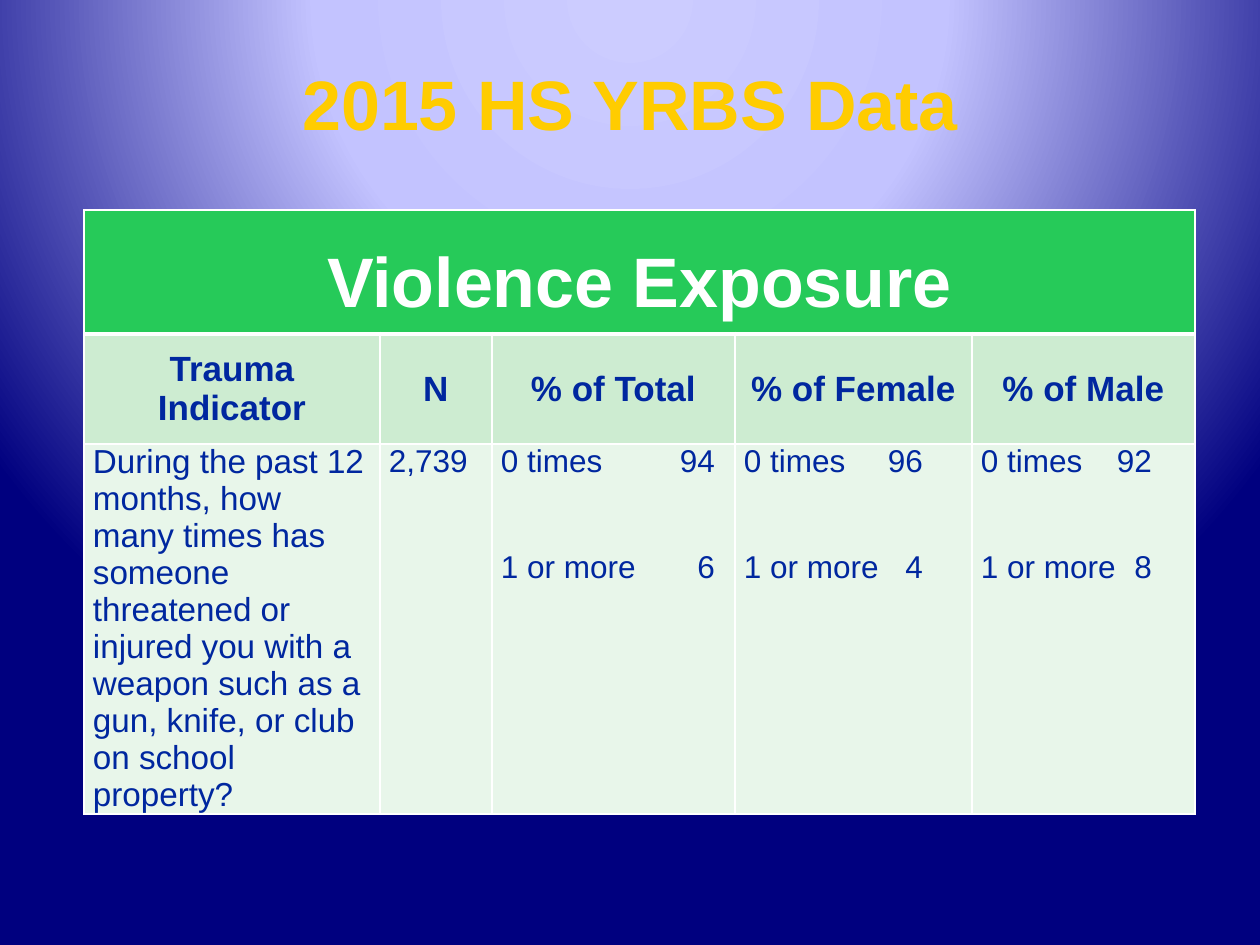
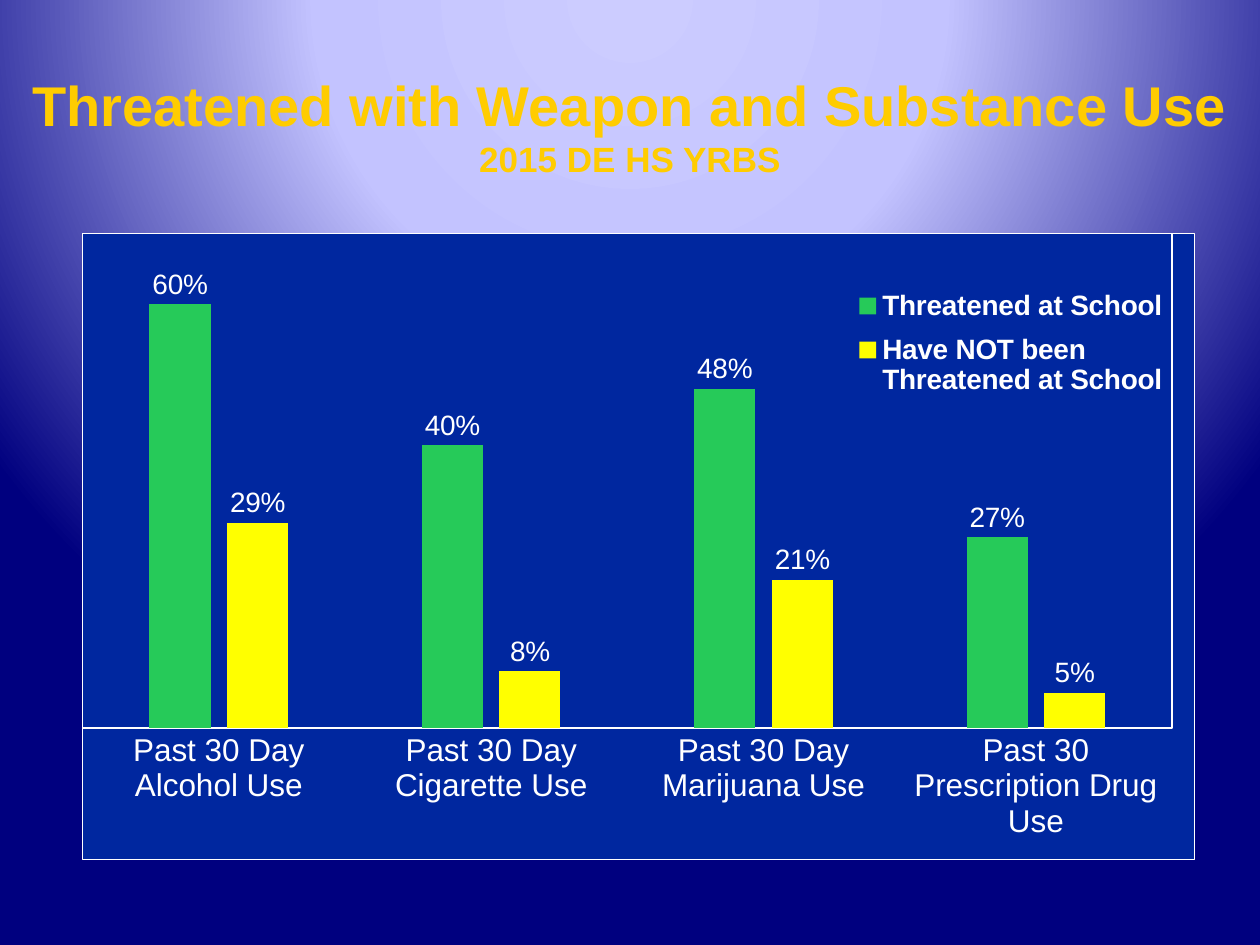
"""Build two slides on violence exposure: a data table and a column chart."""
from dataclasses import dataclass

from pptx import Presentation, oxml as ox, util as u
from pptx.chart import data as cd
from pptx.dml import color as dc
from pptx.enum import chart as ce, text as te
from pptx.oxml import ns

SCALE = 914400 / 126
FONT = "Arial"
WHITE, GOLD, NAVY = "FFFFFF", "FFCC00", "00279F"
GREEN, YELLOW, MINT, PALE = "26CA59", "FFFF00", "CDECD1", "E8F6EA"
GLOW = ((0, "CCCCFF"), (40, "C3C3FF"), (100, "00007F"))
CENTER = te.PP_ALIGN.CENTER


@dataclass
class Column:
    width: int
    head: str
    lines: tuple
    size: int = 18
    tab: int = 0


@dataclass
class Group:
    name: str
    color: str
    vals: tuple


COLUMNS = (
    Column(296, "Trauma Indicator", (
        "During the past 12 months, how many times has someone threatened or "
        "injured you with a weapon such as a gun, knife, or club on school property?",), 19),
    Column(112, "N", ("2,739",)),
    Column(243, "% of Total", ("0 times\t94", "1 or more\t6"), tab=214),
    Column(237, "% of Female", ("0 times\t96", "1 or more\t4"), tab=179),
    Column(223, "% of Male", ("0 times\t92", "1 or more\t8"), tab=171),
)
ROWS = (124, 110, 370)
USES = ("Past 30 Day Alcohol Use", "Past 30 Day Cigarette Use",
        "Past 30 Day Marijuana Use", "Past 30 Prescription Drug Use")
GROUPS = (
    Group("Threatened at School", GREEN, (0.6, 0.4, 0.48, 0.27)),
    Group("Have NOT been Threatened at School", YELLOW, (0.29, 0.08, 0.21, 0.05)),
)


def px(num: float) -> u.Emu:
    return u.Emu(round(num * SCALE))


def ink(code: str) -> dc.RGBColor:
    return dc.RGBColor.from_string(code)


def node(tag: str, body: str, attrs: str = ""):
    return ox.parse_xml(f"<{tag} {ns.nsdecls('a', 'c')} {attrs}>{body}</{tag}>")


def solid(code: str) -> str:
    return f'<a:solidFill><a:srgbClr val="{code}"/></a:solidFill>'


def style(font, size: int, color: str = WHITE, bold: bool = False) -> None:
    font.name, font.size, font.bold = FONT, u.Pt(size), bold
    font.color.rgb = ink(color)


def write(para, text: str, size: int, color: str, bold: bool = False, align=None,
          before: int = 0, tab: int = 0) -> None:
    run = para.add_run()
    run.text = text
    style(run.font, size, color, bold)
    para.alignment = align
    if before:
        para.space_before = px(before)
    if tab:
        stop = f'<a:tab pos="{px(tab)}" algn="r"/>'
        para._p.get_or_add_pPr().append(node("a:tabLst", stop))


def paint(master) -> None:
    master.background.fill.solid()
    old = master.element.find(".//" + ns.qn("p:bgPr")).find(ns.qn("a:solidFill"))
    stops = "".join(f'<a:gs pos="{at * 1000}"><a:srgbClr val="{code}"/></a:gs>'
                    for at, code in GLOW)
    focus = '<a:fillToRect l="50000" t="-80000" r="50000" b="180000"/>'
    body = f'<a:gsLst>{stops}</a:gsLst><a:path path="circle">{focus}</a:path>'
    old.getparent().replace(old, node("a:gradFill", body, 'rotWithShape="1"'))


def head(slide, top: int, *lines: tuple) -> None:
    title = slide.shapes.title
    title.left, title.top, title.width, title.height = map(px, (0, top, 1260, 152))
    frame = title.text_frame
    frame.auto_size = te.MSO_AUTO_SIZE.NONE
    frame.vertical_anchor = te.MSO_ANCHOR.TOP
    frame.margin_top = px(12)
    para = frame.paragraphs[0]
    for num, (text, size) in enumerate(lines):
        if num:
            para.add_line_break()
        write(para, text, size, GOLD, bold=True, align=CENTER)


def dress(cell, fill: str, top: int = 1, base: int = 1, middle: bool = True) -> None:
    cell.margin_left = cell.margin_right = px(9)
    cell.margin_top = cell.margin_bottom = 0
    cell.vertical_anchor = te.MSO_ANCHOR.MIDDLE if middle else te.MSO_ANCHOR.TOP
    props = cell._tc.get_or_add_tcPr()
    for side, width in zip("LRTB", (1, 1, top, base)):
        props.append(node(f"a:ln{side}", solid(WHITE), f'w="{u.Pt(width)}"'))
    cell.fill.solid()
    cell.fill.fore_color.rgb = ink(fill)


def grid(slide) -> None:
    wide = sum(col.width for col in COLUMNS)
    box = map(px, (84, 210, wide, sum(ROWS)))
    table = slide.shapes.add_table(len(ROWS), len(COLUMNS), *box).table
    for row, height in zip(table.rows, ROWS):
        row.height = px(height)
    for num, col in enumerate(COLUMNS):
        table.columns[num].width = px(col.width)
        band, label, body = (table.cell(row, num) for row in range(len(ROWS)))
        dress(band, GREEN, base=3)
        dress(label, MINT, top=3)
        dress(body, PALE, middle=False)
        write(label.text_frame.paragraphs[0], col.head, 20, NAVY, bold=True, align=CENTER)
        frame = body.text_frame
        for at, line in enumerate(col.lines):
            para = frame.add_paragraph() if at else frame.paragraphs[0]
            write(para, line, col.size, NAVY, before=71 * at, tab=col.tab)
    band = table.cell(0, 0)
    band.merge(table.cell(0, len(COLUMNS) - 1))
    band.margin_top = px(23)
    write(band.text_frame.paragraphs[0], "Violence Exposure", 40, WHITE,
          bold=True, align=CENTER)


def place(x: float, y: float, w: float, h: float, inner: bool = False):
    body = '<c:layoutTarget val="inner"/>' if inner else ""
    body += '<c:xMode val="edge"/><c:yMode val="edge"/>'
    body += "".join(f'<c:{key} val="{val}"/>' for key, val in zip("xywh", (x, y, w, h)))
    return node("c:layout", f"<c:manualLayout>{body}</c:manualLayout>")


def panel():
    return node("c:spPr", f'{solid(NAVY)}<a:ln w="{u.Pt(0.75)}">{solid(WHITE)}</a:ln>')


def graph(slide) -> None:
    data = cd.CategoryChartData(number_format="0%")
    data.categories = USES
    for group in GROUPS:
        data.add_series(group.name, group.vals)
    box = map(px, (82, 233, 1113, 627))
    chart = slide.shapes.add_chart(ce.XL_CHART_TYPE.COLUMN_CLUSTERED, *box, data).chart
    style(chart.font, 10)
    chart.has_title = False
    plot = chart.plots[0]
    plot.gap_width, plot.overlap, plot.vary_by_categories = 219, -27, False
    for bars, group in zip(plot.series, GROUPS):
        bars.format.fill.solid()
        bars.format.fill.fore_color.rgb = ink(group.color)
        tags = bars.data_labels
        tags.show_value = True
        tags.number_format, tags.number_format_is_linked = "0%", False
        tags.position = ce.XL_LABEL_POSITION.OUTSIDE_END
        style(tags.font, 16)
    axis = chart.category_axis
    axis.major_tick_mark = axis.minor_tick_mark = ce.XL_TICK_MARK.NONE
    axis.format.line.color.rgb = ink(WHITE)
    axis.format.line.width = u.Pt(0.75)
    style(axis.tick_labels.font, 18)
    scale = chart.value_axis
    scale.has_major_gridlines = scale.visible = False
    scale.minimum_scale, scale.maximum_scale = 0, 0.7
    chart.has_legend = True
    legend = chart.legend
    legend.position = ce.XL_LEGEND_POSITION.RIGHT
    legend.include_in_layout = False
    style(legend.font, 16, bold=True)
    key = legend._element
    for old in key.findall(ns.qn("c:layout")):
        key.remove(old)
    key.find(ns.qn("c:legendPos")).addnext(place(0.69, 0.07, 0.29, 0.21))
    root = chart.element.find(ns.qn("c:chart"))
    area = root.find(ns.qn("c:plotArea"))
    for old in area.findall(ns.qn("c:layout")):
        area.remove(old)
    area.insert(0, place(0, 0, 0.98, 0.79, inner=True))
    area.append(panel())
    root.addnext(panel())


def main() -> None:
    deck = Presentation()
    deck.slide_width, deck.slide_height = px(1260), px(945)
    paint(deck.slide_master)
    layout = deck.slide_layouts[5]
    first = deck.slides.add_slide(layout)
    head(first, 48, ("2015 HS YRBS Data", 40))
    grid(first)
    second = deck.slides.add_slide(layout)
    head(second, 58, ("Threatened with Weapon and Substance Use", 32),
         ("2015 DE HS YRBS", 20))
    graph(second)
    deck.save("out.pptx")


if __name__ == "__main__":
    main()
